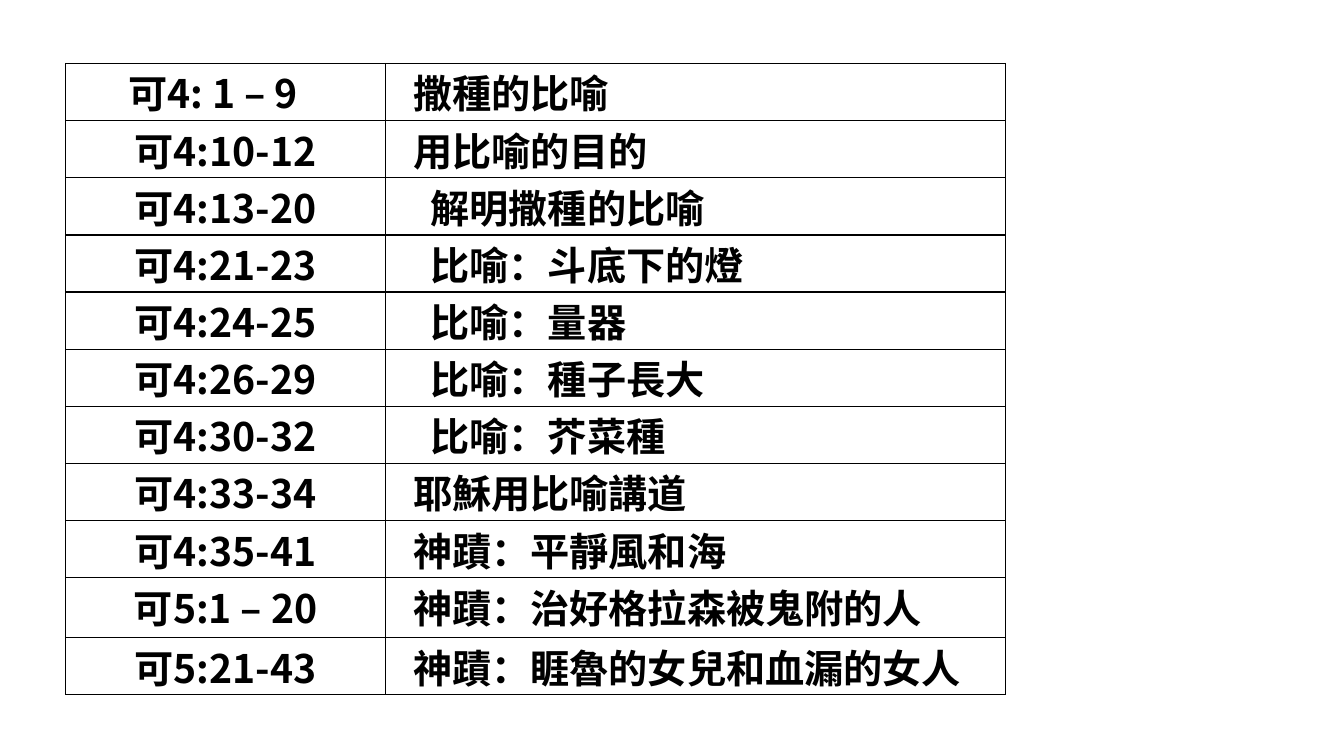
import pptx
import pptx.dml.color
import pptx.enum.text
import pptx.oxml.ns
import pptx.util
from lxml import etree

Cm = pptx.util.Cm
Pt = pptx.util.Pt
ALIGN = pptx.enum.text.PP_ALIGN
COLOURS = {"text": "000000", "border": "000000", "cell": "FFFFFF"}
FONT = "Noto Sans CJK SC"
TOP_LEVEL, SUB_LEVEL = Cm(0.7), Cm(1.14)

passages = [
    ("可4: 1 – 9", "撒種的比喻", TOP_LEVEL),
    ("可4:10-12", "用比喻的目的", TOP_LEVEL),
    ("可4:13-20", "解明撒種的比喻", SUB_LEVEL),
    ("可4:21-23", "比喻：斗底下的燈", SUB_LEVEL),
    ("可4:24-25", "比喻：量器", SUB_LEVEL),
    ("可4:26-29", "比喻：種子長大", SUB_LEVEL),
    ("可4:30-32", "比喻：芥菜種", SUB_LEVEL),
    ("可4:33-34", "耶穌用比喻講道", TOP_LEVEL),
    ("可4:35-41", "神蹟：平靜風和海", TOP_LEVEL),
    ("可5:1 – 20", "神蹟：治好格拉森被鬼附的人", TOP_LEVEL),
    ("可5:21-43", "神蹟：睚魯的女兒和血漏的女人", TOP_LEVEL),
]


def add_borders(cell):
    properties = cell._tc.get_or_add_tcPr()
    for side in ("a:lnL", "a:lnR", "a:lnT", "a:lnB"):
        line = etree.SubElement(properties, pptx.oxml.ns.qn(side), w=str(Pt(1)))
        fill = etree.SubElement(line, pptx.oxml.ns.qn("a:solidFill"))
        etree.SubElement(fill, pptx.oxml.ns.qn("a:srgbClr"), val=COLOURS["border"])


def fill_cell(cell, text, alignment, left_margin):
    cell.margin_left, cell.margin_right = left_margin, Cm(0.25)
    cell.margin_top = cell.margin_bottom = 0
    add_borders(cell)
    cell.fill.solid()
    cell.fill.fore_color.rgb = pptx.dml.color.RGBColor.from_string(COLOURS["cell"])
    paragraph = cell.text_frame.paragraphs[0]
    paragraph.text = text
    paragraph.alignment = alignment
    font = paragraph.runs[0].font
    font.name, font.size, font.bold = FONT, Pt(28), True
    font.color.rgb = pptx.dml.color.RGBColor.from_string(COLOURS["text"])
    run_properties = paragraph.runs[0]._r.get_or_add_rPr()
    etree.SubElement(run_properties, pptx.oxml.ns.qn("a:ea"), typeface=FONT)


presentation = pptx.Presentation()
presentation.slide_width, presentation.slide_height = Cm(33.87), Cm(19.05)
slide = presentation.slides.add_slide(presentation.slide_layouts[6])

table = slide.shapes.add_table(
    len(passages), 2, Cm(1.66), Cm(1.6), Cm(23.67), Cm(15.91)
).table
table.first_row = table.horz_banding = False
table.columns[0].width, table.columns[1].width = Cm(8.05), Cm(15.62)

for index, (reference, topic, indent) in enumerate(passages):
    table.rows[index].height = Cm(1.44)
    if index == 0:
        fill_cell(table.cell(index, 0), reference, ALIGN.JUSTIFY, Cm(1.58))
    else:
        fill_cell(table.cell(index, 0), reference, ALIGN.CENTER, Cm(0.25))
    fill_cell(table.cell(index, 1), topic, ALIGN.JUSTIFY, indent)
table.rows[9].height = Cm(1.51)

presentation.save("out.pptx")
